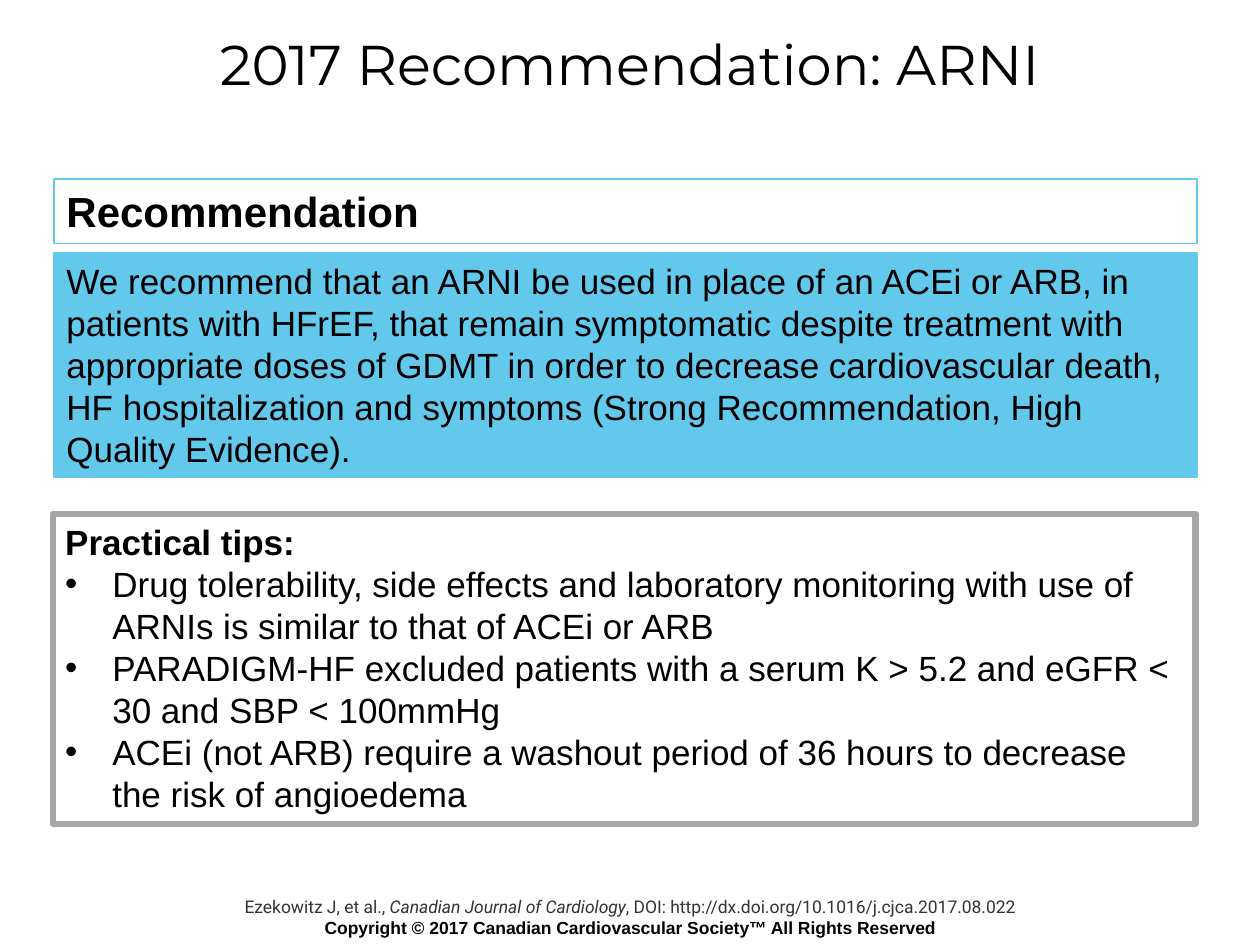
from dataclasses import dataclass
from typing import Optional

from lxml import etree
from pptx import Presentation
from pptx import util as u
from pptx.dml.color import RGBColor
from pptx.enum import shapes, text
from pptx.oxml.ns import qn


@dataclass(frozen=True)
class Theme:
    black: str = "000000"
    citation: str = "333333"
    blue: str = "62C8EC"
    grey: str = "A6A6A6"
    body_font: str = "Arial"
    title_font: str = "Montserrat"
    citation_font: str = "Roboto"
    title_size: int = 32
    heading_size: int = 24
    body_size: int = 20
    footer_size: int = 10


THEME = Theme()
BULLET_INDENT = u.Cm(0.95)


@dataclass(frozen=True)
class Box:
    """Position and outline of a panel, in centimetres and points."""
    left: float
    top: float
    width: float
    height: float
    line: Optional[str] = None
    line_width: float = 0.75
    fill: Optional[str] = None


@dataclass(frozen=True)
class Panel:
    box: Box
    content: str
    size: int
    bold: bool = False


PANELS = [
    Panel(Box(1.09, 3.61, 23.04, 1.3, THEME.blue), "Recommendation", THEME.heading_size, True),
    Panel(
        Box(1.09, 5.1, 23.04, 4.52, THEME.blue, fill=THEME.blue),
        "We recommend that an ARNI be used in place of an ACEi or ARB, in patients with HFrEF, "
        "that remain symptomatic despite treatment with appropriate doses of GDMT in order to "
        "decrease cardiovascular death, HF hospitalization and symptoms "
        "(Strong Recommendation, High Quality Evidence).",
        THEME.body_size,
    ),
]
TITLE_BOX = Box(0, 0.64, 25.4, 1.27)
TIPS_BOX = Box(1.06, 10.36, 23.04, 6.25, THEME.grey, 3.5)
FOOTER_BOX = Box(2.92, 17.93, 19.56, 1.12)
TIPS = [
    "Drug tolerability, side effects and laboratory monitoring with use of ARNIs is similar "
    "to that of ACEi or ARB",
    "PARADIGM-HF excluded patients with a serum K > 5.2 and eGFR < 30 and SBP < 100mmHg",
    "ACEi (not ARB) require a washout period of 36 hours to decrease the risk of angioedema",
]


def add_run(paragraph, content: str, *, size: int, font: str = THEME.body_font,
            color: str = THEME.black, bold: bool = False, italic: bool = False) -> None:
    run = paragraph.add_run()
    run.text = content
    run.font.size = u.Pt(size)
    run.font.name = font
    run.font.color.rgb = RGBColor.from_string(color)
    run.font.bold = bold
    run.font.italic = italic


def place(shape, box: Box) -> None:
    shape.left, shape.top = u.Cm(box.left), u.Cm(box.top)
    shape.width, shape.height = u.Cm(box.width), u.Cm(box.height)


def outline(shape, box: Box) -> None:
    shape.line.color.rgb = RGBColor.from_string(box.line)
    shape.line.width = u.Pt(box.line_width)


def prepare_frame(shape, anchor=text.MSO_ANCHOR.TOP):
    frame = shape.text_frame
    frame.word_wrap = True
    frame.auto_size = text.MSO_AUTO_SIZE.NONE
    frame.vertical_anchor = anchor
    return frame


def set_bullet(paragraph, bulleted: bool) -> None:
    properties = paragraph._p.get_or_add_pPr()
    indent = BULLET_INDENT if bulleted else 0
    properties.set("marL", str(indent))
    properties.set("indent", str(-indent))
    paragraph.space_before = u.Pt(0)
    if bulleted:
        etree.SubElement(properties, qn("a:buFont")).set("typeface", THEME.body_font)
        etree.SubElement(properties, qn("a:buChar")).set("char", "•")
    else:
        etree.SubElement(properties, qn("a:buNone"))


def add_panel(slide, panel: Panel) -> None:
    box = panel.box
    shape = slide.shapes.add_shape(
        shapes.MSO_SHAPE.RECTANGLE,
        u.Cm(box.left), u.Cm(box.top), u.Cm(box.width), u.Cm(box.height))
    shape.shadow.inherit = False
    if box.fill:
        shape.fill.solid()
        shape.fill.fore_color.rgb = RGBColor.from_string(box.fill)
    else:
        shape.fill.background()
    outline(shape, box)
    paragraph = prepare_frame(shape).paragraphs[0]
    paragraph.alignment = text.PP_ALIGN.LEFT
    add_run(paragraph, panel.content, size=panel.size, bold=panel.bold)


def add_tips(shape) -> None:
    place(shape, TIPS_BOX)
    outline(shape, TIPS_BOX)
    etree.SubElement(shape.line._get_or_add_ln(), qn("a:round"))
    frame = prepare_frame(shape)
    heading = frame.paragraphs[0]
    set_bullet(heading, False)
    add_run(heading, "Practical tips:", size=THEME.body_size, bold=True)
    for tip in TIPS:
        paragraph = frame.add_paragraph()
        set_bullet(paragraph, True)
        add_run(paragraph, tip, size=THEME.body_size)


def add_footer(slide) -> None:
    shape = slide.shapes.add_textbox(0, 0, 0, 0)
    place(shape, FOOTER_BOX)
    frame = prepare_frame(shape)
    citation, rights = frame.paragraphs[0], frame.add_paragraph()
    citation.alignment = rights.alignment = text.PP_ALIGN.CENTER
    for content, italic in [
        ("Ezekowitz J, et al., ", False),
        ("Canadian Journal of Cardiology", True),
        (", DOI: http://dx.doi.org/10.1016/j.cjca.2017.08.022", False),
    ]:
        add_run(citation, content, size=THEME.footer_size, font=THEME.citation_font,
                color=THEME.citation, italic=italic)
    add_run(rights, "Copyright © 2017 Canadian Cardiovascular Society™ All Rights Reserved",
            size=THEME.footer_size, bold=True)


def main() -> None:
    presentation = Presentation()
    presentation.slide_width, presentation.slide_height = u.Cm(25.4), u.Cm(19.05)
    slide = presentation.slides.add_slide(presentation.slide_layouts[1])

    # Title
    title = slide.shapes.title
    place(title, TITLE_BOX)
    paragraph = prepare_frame(title, text.MSO_ANCHOR.MIDDLE).paragraphs[0]
    paragraph.alignment = text.PP_ALIGN.CENTER
    add_run(paragraph, "2017 Recommendation: ARNI", size=THEME.title_size, font=THEME.title_font)

    # Recommendation, practical tips and source
    for panel in PANELS:
        add_panel(slide, panel)
    add_tips(slide.placeholders[1])
    add_footer(slide)

    presentation.save("out.pptx")


if __name__ == "__main__":
    main()
